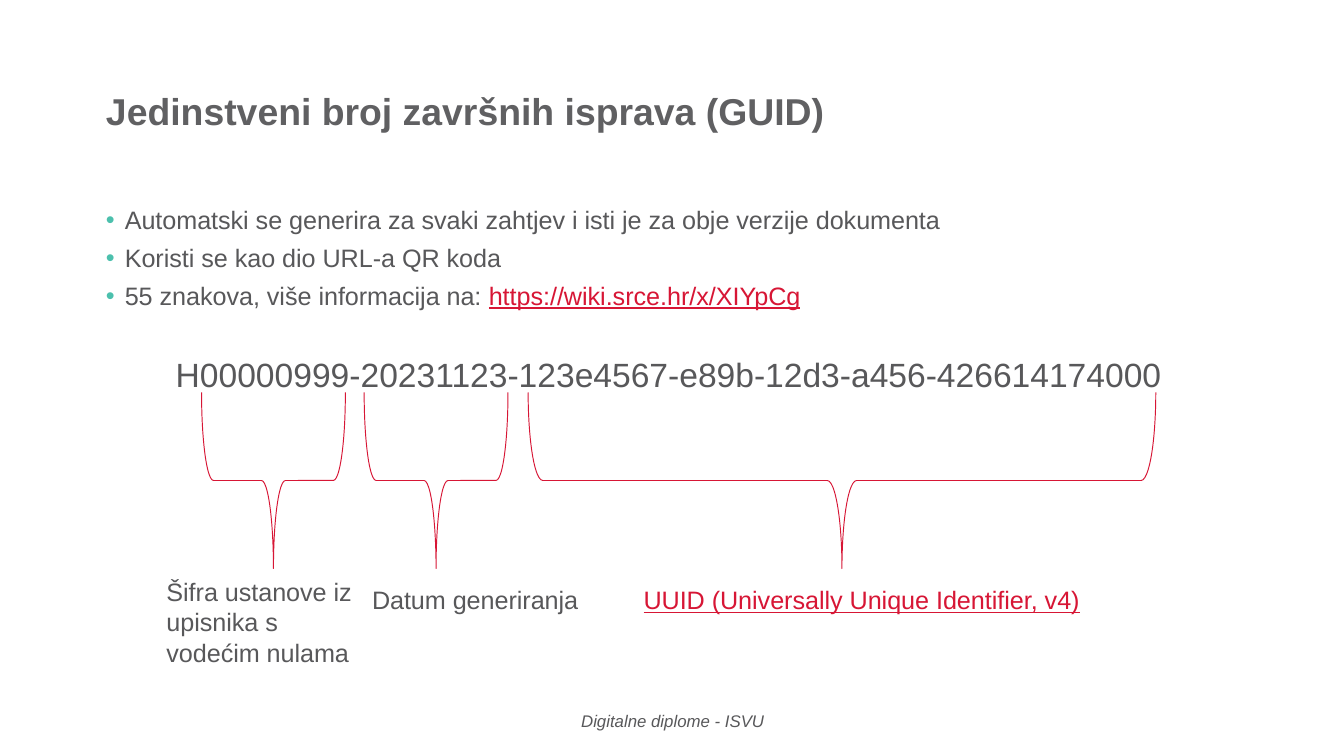
"""Build the slide that explains the parts of a diploma GUID."""
from dataclasses import dataclass

from lxml import etree
from pptx import Presentation
from pptx.dml.color import RGBColor
from pptx.enum.shapes import MSO_SHAPE
from pptx.enum.text import MSO_ANCHOR, PP_ALIGN
from pptx.oxml.ns import qn
from pptx.util import Inches, Pt

BRACE = MSO_SHAPE.LEFT_BRACE
TOP, MIDDLE = MSO_ANCHOR.TOP, MSO_ANCHOR.MIDDLE
LEFT, CENTER = PP_ALIGN.LEFT, PP_ALIGN.CENTER

TITLE_GRAY = RGBColor(0x60, 0x60, 0x62)
TEXT_GRAY = RGBColor(0x58, 0x58, 0x5A)
RED = RGBColor(0xD7, 0x16, 0x35)
TEAL = RGBColor(0x4C, 0xC0, 0xAD)

FONT = "Arial"
BODY_SIZE = 13.5
BRACE_TOP, BRACE_DEPTH = 2.92, 1.31


@dataclass
class Text:
    text: str
    left: float
    top: float
    width: float
    height: float
    size: float = BODY_SIZE
    color: RGBColor = TEXT_GRAY
    bold: bool = False
    italic: bool = False
    underline: bool = False
    align: PP_ALIGN = LEFT
    anchor: MSO_ANCHOR = TOP
    spacing: float = 1.0
    wrap: bool = True


@dataclass
class Part:
    left: float
    width: float
    label: Text


TITLE = Text("Jedinstveni broj završnih isprava (GUID)", 0.69, 0.3, 8.62, 1.09,
             size=20, color=TITLE_GRAY, bold=True, anchor=MIDDLE, spacing=0.9)
FOOTER = Text("Digitalne diplome - ISVU", 2.26, 5.21, 5.49, 0.3,
              size=9, italic=True, align=CENTER, anchor=MIDDLE)

GUID = "H00000999-20231123-123e4567-e89b-12d3-a456-426614174000"
BULLETS = [
    ("Automatski se generira za svaki zahtjev i isti je za obje verzije dokumenta", ""),
    ("Koristi se kao dio URL-a QR koda", ""),
    ("55 znakova, više informacija na: ", "https://wiki.srce.hr/x/XIYpCg"),
]

PARTS = [
    Part(1.5, 1.07, Text("Šifra ustanove iz upisnika s vodećim nulama",
                         1.14, 4.24, 1.6, 0.78)),
    Part(2.71, 1.07, Text("Datum generiranja", 2.67, 4.3, 1.76, 0.33, wrap=False)),
    Part(3.93, 4.67, Text("UUID (Universally Unique Identifier, v4)",
                          4.69, 4.3, 3.49, 0.33, color=RED, underline=True,
                          wrap=False)),
]


def add_text(s, item: Text) -> None:
    """Add a text box with one formatted paragraph."""
    box = s.shapes.add_textbox(Inches(item.left), Inches(item.top),
                               Inches(item.width), Inches(item.height))
    tf = box.text_frame
    tf.word_wrap = item.wrap
    tf.vertical_anchor = item.anchor
    tf.text = item.text
    p = tf.paragraphs[0]
    p.alignment = item.align
    p.line_spacing = item.spacing
    font = p.runs[0].font
    font.name, font.size = FONT, Pt(item.size)
    font.bold, font.italic, font.underline = item.bold, item.italic, item.underline
    font.color.rgb = item.color


def add_bullet(p) -> None:
    """Give a paragraph a teal bullet and a hanging indent."""
    pPr = p._p.get_or_add_pPr()
    indent = Inches(0.14)
    pPr.set("marL", str(indent))
    pPr.set("indent", str(-indent))
    color = etree.SubElement(pPr, qn("a:buClr"))
    etree.SubElement(color, qn("a:srgbClr")).set("val", str(TEAL))
    etree.SubElement(pPr, qn("a:buFont")).set("typeface", FONT)
    etree.SubElement(pPr, qn("a:buChar")).set("char", "•")


def add_body(s, bullets: list[tuple[str, str]], guid: str) -> None:
    """Add the bullet list with red web addresses, then the centred GUID."""
    box = s.shapes.add_textbox(Inches(0.69), Inches(1.5), Inches(8.62), Inches(2.57))
    tf = box.text_frame
    tf.word_wrap = True
    for i, (text, address) in enumerate(bullets):
        p = tf.add_paragraph() if i else tf.paragraphs[0]
        add_bullet(p)
        p.line_spacing = 0.9
        p.space_before = Pt(5.6 if i else 0)
        p.text = text
        if address:
            p.add_run().text = address
        for r, color in zip(p.runs, (TEXT_GRAY, RED)):
            r.font.name, r.font.size = FONT, Pt(BODY_SIZE)
            r.font.color.rgb = color
            r.font.underline = color == RED
    p = tf.add_paragraph()
    p._p.get_or_add_pPr().set("marR", str(Inches(0.05)))
    p.alignment = CENTER
    p.line_spacing = 0.9
    p.space_before = Pt(25.5)
    p.text = guid
    font = p.runs[0].font
    font.name, font.size = FONT, Pt(18)
    font.color.rgb = TEXT_GRAY


def add_part(s, part: Part) -> None:
    """Add a brace that opens upwards over its label."""
    left = part.left + (part.width - BRACE_DEPTH) / 2
    top = BRACE_TOP + (BRACE_DEPTH - part.width) / 2
    sp = s.shapes.add_shape(BRACE, Inches(left), Inches(top),
                            Inches(BRACE_DEPTH), Inches(part.width))
    sp.rotation = 270
    sp.shadow.inherit = False
    sp.fill.background()
    sp.line.color.rgb = RED
    sp.line.width = Pt(0.5)
    add_text(s, part.label)


def main() -> None:
    """Build and save the slide."""
    prs = Presentation()
    prs.slide_width = Inches(10)
    prs.slide_height = Inches(10 * 9 / 16)
    s = prs.slides.add_slide(prs.slide_layouts[6])
    add_text(s, TITLE)
    add_body(s, BULLETS, GUID)
    add_text(s, FOOTER)
    for part in PARTS:
        add_part(s, part)
    prs.save("out.pptx")


if __name__ == "__main__":
    main()
